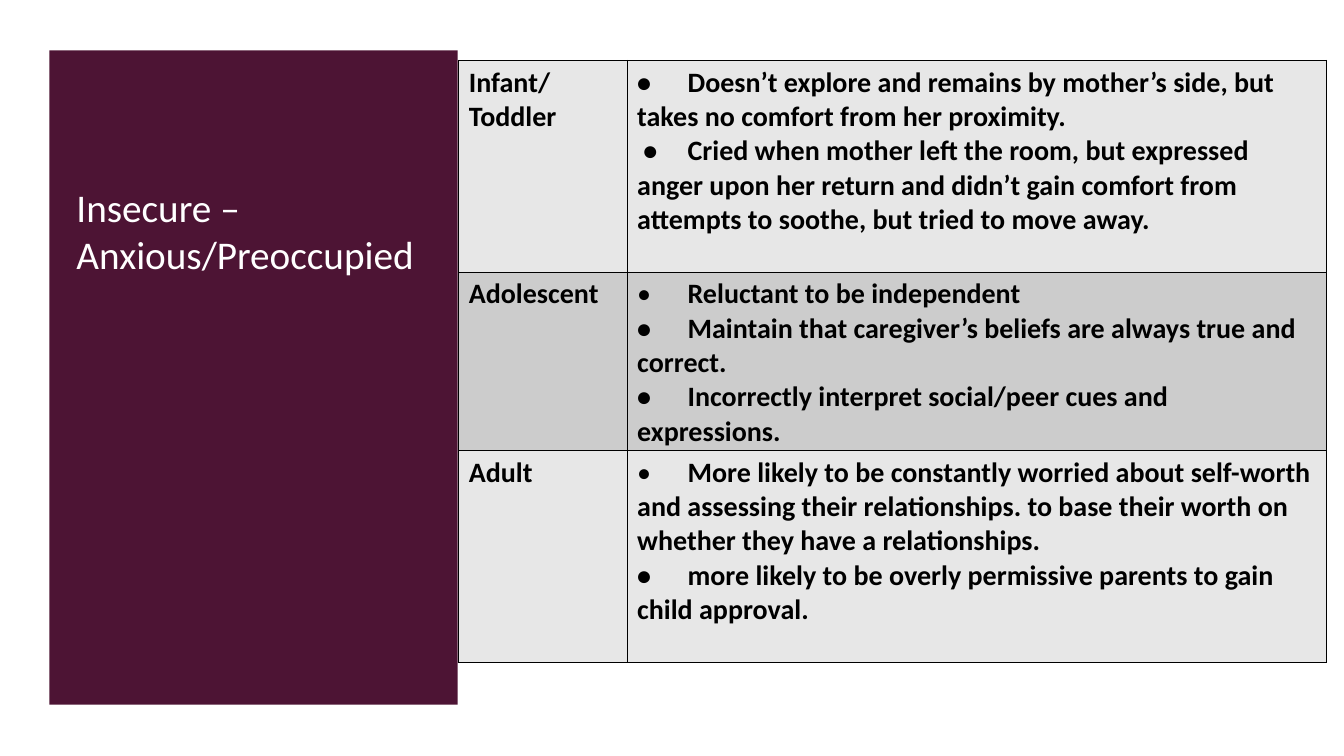
from lxml.etree import SubElement
from pptx import Presentation
from pptx.dml.color import RGBColor
from pptx.enum.shapes import MSO_SHAPE
from pptx.oxml.ns import qn
from pptx.util import Inches, Pt

# Content: stage lines, traits as (bullet, bullet is bold, wording), row height
TITLE = "Insecure – Anxious/Preoccupied"
STAGES = [
    (["Infant/", "Toddler"], [
        ("•", True, "Doesn’t explore and remains by mother’s side, but takes no "
                    "comfort from her proximity."),
        (" •", True, "Cried when mother left the room, but expressed anger upon her "
                     "return and didn’t gain comfort from attempts to soothe, but "
                     "tried to move away."),
    ], 2.1),
    (["Adolescent"], [
        ("•", False, "Reluctant to be independent"),
        ("•", True, "Maintain that caregiver’s beliefs are always true and correct."),
        ("•", True, "Incorrectly interpret social/peer cues and expressions."),
    ], 1.77),
    (["Adult"], [
        ("•", False, "More likely to be constantly worried about self-worth and "
                     "assessing their relationships. to base their worth on whether "
                     "they have a relationships."),
        ("•", True, "more likely to be overly permissive parents to gain child "
                    "approval."),
    ], 2.1),
]
COLUMN_WIDTHS = [1.67, 6.94]

FONT = "Calibri"
PLUM = RGBColor(0x4D, 0x14, 0x34)
WHITE = RGBColor(0xFF, 0xFF, 0xFF)
BLACK = RGBColor(0x00, 0x00, 0x00)
BANDS = [RGBColor(0xE7, 0xE7, 0xE7), RGBColor(0xCC, 0xCC, 0xCC)]


def set_font(paragraph, size, color, bold=False):
    font = paragraph.font
    font.name, font.size, font.bold = FONT, Pt(size), bold
    font.color.rgb = color


def add_borders(cell):
    properties = cell._tc.get_or_add_tcPr()
    for position, side in enumerate(("a:lnL", "a:lnR", "a:lnT", "a:lnB")):
        line = properties.makeelement(qn(side), {"w": str(Pt(1))})
        fill = SubElement(line, qn("a:solidFill"))
        SubElement(fill, qn("a:srgbClr"), val=str(BLACK))
        properties.insert(position, line)


def add_tab_stop(paragraph, position):
    properties = paragraph._p.get_or_add_pPr()
    stops = properties.makeelement(qn("a:tabLst"), {})
    SubElement(stops, qn("a:tab"), pos=str(Inches(position)), algn="l")
    properties.insert(0, stops)


def fill_cell(cell, lines, band):
    """Write each line, a list of (text, bold) runs, as its own paragraph."""
    cell.fill.solid()
    cell.fill.fore_color.rgb = band
    add_borders(cell)
    frame = cell.text_frame
    for index, runs in enumerate(lines):
        paragraph = frame.add_paragraph() if index else frame.paragraphs[0]
        set_font(paragraph, 20, BLACK, True)
        for text, bold in runs:
            run = paragraph.add_run()
            run.text = text
            run.font.bold = bold
        if len(runs) > 1:
            add_tab_stop(paragraph, 0.5)


presentation = Presentation()
presentation.slide_width, presentation.slide_height = Inches(13.33), Inches(7.5)
slide = presentation.slides.add_slide(presentation.slide_layouts[6])

# Side panel
panel = slide.shapes.add_shape(
    MSO_SHAPE.RECTANGLE, Inches(0.49), Inches(0.5), Inches(4.05), Inches(6.49))
panel.shadow.inherit = False
panel.fill.solid()
panel.fill.fore_color.rgb = PLUM
panel.line.fill.background()

# Title
title = slide.shapes.add_textbox(
    Inches(0.66), Inches(1.77), Inches(3.88), Inches(1.04))
title.text_frame.word_wrap = True
title.text_frame.text = TITLE
set_font(title.text_frame.paragraphs[0], 28, WHITE)

# Table of life stages
stage_table = slide.shapes.add_table(
    len(STAGES), len(COLUMN_WIDTHS), Inches(4.55), Inches(0.6),
    Inches(sum(COLUMN_WIDTHS)), Inches(sum(stage[2] for stage in STAGES))).table
for column, width in zip(stage_table.columns, COLUMN_WIDTHS):
    column.width = Inches(width)
for index, (stage, traits, height) in enumerate(STAGES):
    stage_table.rows[index].height = Inches(height)
    band = BANDS[index % 2]
    fill_cell(stage_table.cell(index, 0), [[(line, True)] for line in stage], band)
    fill_cell(stage_table.cell(index, 1),
              [[(bullet + "\t", bold), (trait, True)]
               for bullet, bold, trait in traits], band)

presentation.save("out.pptx")
